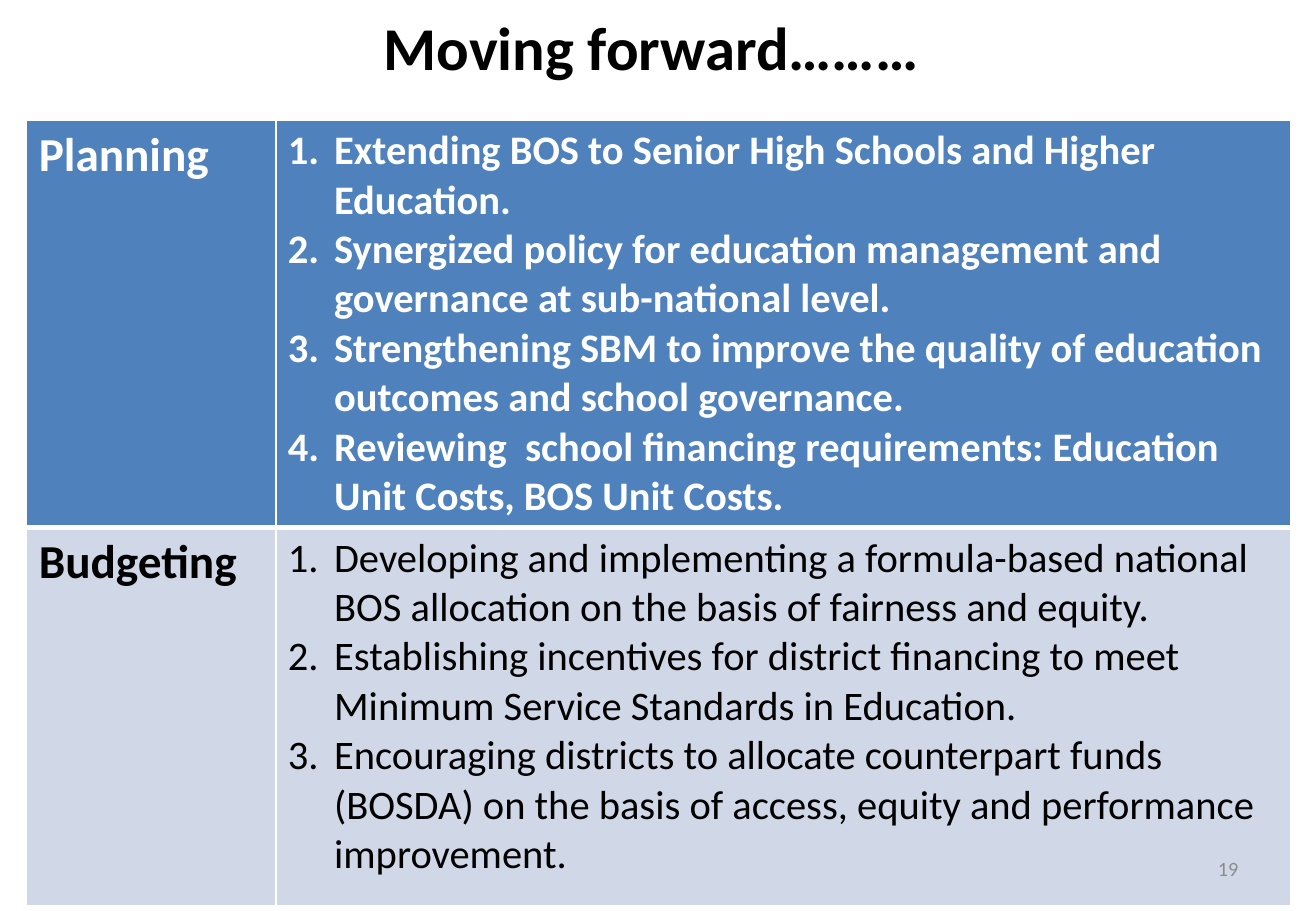
from lxml import etree
from pptx import Presentation
from pptx.dml.color import RGBColor
from pptx.enum import text
from pptx.oxml import ns
from pptx.util import Inches, Pt

BLACK = RGBColor(0x00, 0x00, 0x00)
WHITE = RGBColor(0xFF, 0xFF, 0xFF)
GREY = RGBColor(0x8C, 0x8C, 0x8C)
BLUE = RGBColor(0x4F, 0x81, 0xBD)
PALE_BLUE = RGBColor(0xD0, 0xD8, 0xE8)
FONT = "Calibri"
INDENT = Inches(0.38)

# Each row: topic, actions, fill, text colour, bold actions, top and bottom border
AGENDA = [
    ("Planning", [
        "Extending BOS to Senior High Schools and Higher Education.",
        "Synergized policy for education management and governance at sub-national level.",
        "Strengthening SBM to improve the quality of education outcomes and school governance.",
        "Reviewing  school financing requirements: Education Unit Costs, BOS Unit Costs.",
    ], BLUE, WHITE, True, 1, 3),
    ("Budgeting", [
        "Developing and implementing a formula-based national BOS allocation "
        "on the basis of fairness and equity.",
        "Establishing incentives for district financing to meet "
        "Minimum Service Standards in Education.",
        "Encouraging districts to allocate counterpart funds (BOSDA) on the basis of access, "
        "equity and performance improvement.",
    ], PALE_BLUE, BLACK, False, 3, 1),
]


def set_font(paragraph, size, color, bold=False):
    font = paragraph.font
    font.name, font.size, font.bold = FONT, Pt(size), bold
    font.color.rgb = color


def number(paragraph):
    properties = paragraph._p.get_or_add_pPr()
    properties.set("marL", str(INDENT))
    properties.set("indent", str(-INDENT))
    etree.SubElement(properties, ns.qn("a:buFont"), typeface="+mj-lt")
    etree.SubElement(properties, ns.qn("a:buAutoNum"), type="arabicPeriod")


def style_cell(cell, fill, top, bottom):
    properties = cell._tc.get_or_add_tcPr()
    for side, width in (("L", 1), ("R", 1), ("T", top), ("B", bottom)):
        line = etree.SubElement(properties, ns.qn("a:ln" + side), w=str(Pt(width)))
        solid = etree.SubElement(line, ns.qn("a:solidFill"))
        etree.SubElement(solid, ns.qn("a:srgbClr"), val=str(WHITE))
    cell.fill.solid()
    cell.fill.fore_color.rgb = fill


def add_heading(slide, left, top, width, height):
    heading = slide.shapes.title
    heading.left, heading.top, heading.width, heading.height = left, top, width, height
    frame = heading.text_frame
    frame.text = "Moving forward……… "
    frame.vertical_anchor = text.MSO_ANCHOR.MIDDLE
    frame.paragraphs[0].alignment = text.PP_ALIGN.CENTER
    set_font(frame.paragraphs[0], 36, BLACK, True)


def add_agenda(slide, left, top, width, height):
    agenda = slide.shapes.add_table(len(AGENDA), 2, left, top, width, height).table
    topic_width = Inches(2.05)
    agenda.columns[0].width = topic_width
    agenda.columns[1].width = width - topic_width
    for row, (topic, actions, fill, color, bold, upper, lower) in enumerate(AGENDA):
        topic_cell, action_cell = agenda.cell(row, 0), agenda.cell(row, 1)
        for cell in (topic_cell, action_cell):
            style_cell(cell, fill, upper, lower)
        topic_cell.text = topic
        set_font(topic_cell.text_frame.paragraphs[0], 28, color, True)
        action_cell.text = "\n".join(actions)
        for paragraph in action_cell.text_frame.paragraphs:
            number(paragraph)
            set_font(paragraph, 24, color, bold)


def add_page_number(slide, left, top, width, height):
    frame = slide.shapes.add_textbox(left, top, width, height).text_frame
    frame.word_wrap = True
    frame.vertical_anchor = text.MSO_ANCHOR.MIDDLE
    frame.text = "19"
    frame.paragraphs[0].alignment = text.PP_ALIGN.RIGHT
    set_font(frame.paragraphs[0], 12, GREY)


def main():
    deck = Presentation()
    deck.slide_width, deck.slide_height = Inches(10.83), Inches(7.5)
    slide = deck.slides.add_slide(deck.slide_layouts[5])
    add_heading(slide, Inches(0.54), Inches(0), Inches(9.75), Inches(0.76))
    add_agenda(slide, Inches(0.22), Inches(0.99), Inches(10.4), Inches(6.22))
    add_page_number(slide, Inches(7.76), Inches(6.95), Inches(2.53), Inches(0.4))
    deck.save("out.pptx")


if __name__ == "__main__":
    main()
